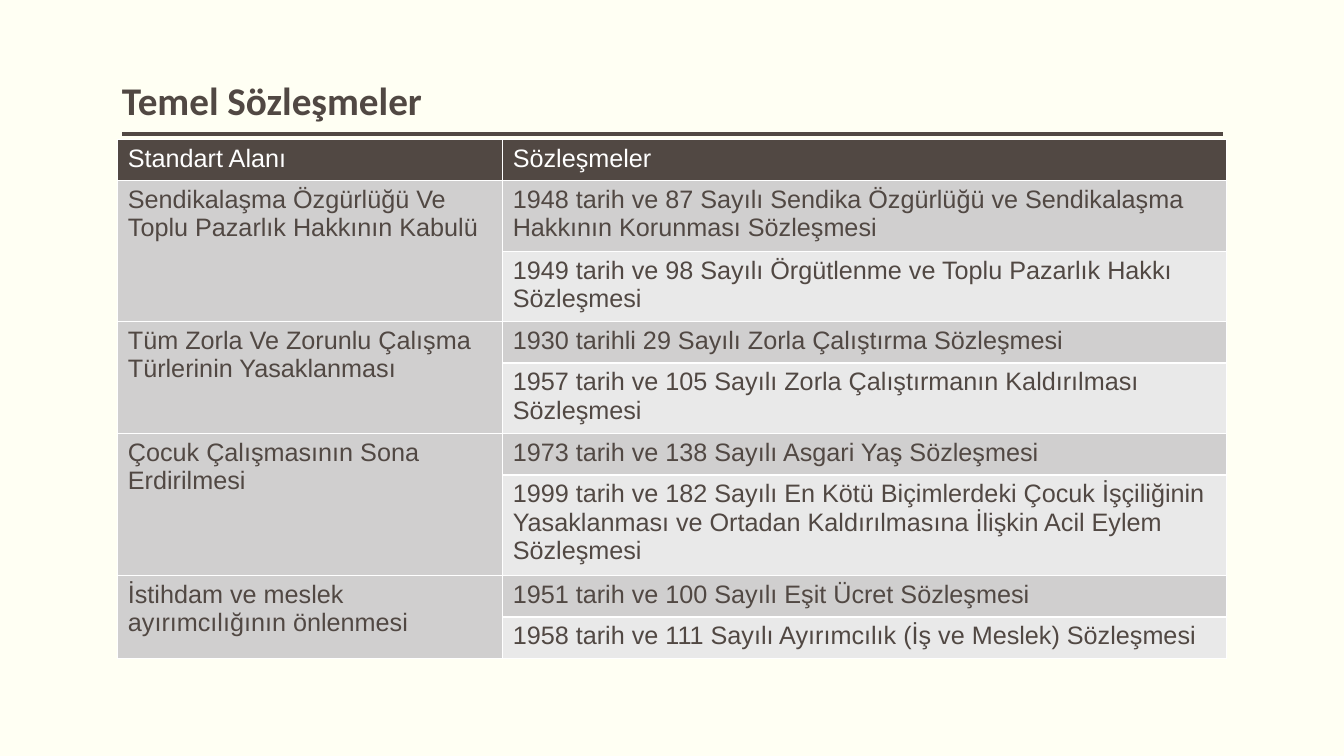
from lxml.etree import SubElement
from pptx import Presentation
from pptx.dml.color import RGBColor
from pptx.enum.text import MSO_ANCHOR
from pptx.oxml.ns import qn
from pptx.util import Cm, Pt

TITLE = "Temel Sözleşmeler"
HEADER = ("Standart Alanı", "Sözleşmeler")
AREAS = [
    ("Sendikalaşma Özgürlüğü Ve Toplu Pazarlık Hakkının Kabulü", (
        "1948 tarih ve 87 Sayılı Sendika Özgürlüğü ve Sendikalaşma Hakkının Korunması Sözleşmesi",
        "1949 tarih ve 98 Sayılı Örgütlenme ve Toplu Pazarlık Hakkı Sözleşmesi")),
    ("Tüm Zorla Ve Zorunlu Çalışma Türlerinin Yasaklanması", (
        "1930 tarihli 29 Sayılı Zorla Çalıştırma Sözleşmesi",
        "1957 tarih ve 105 Sayılı Zorla Çalıştırmanın Kaldırılması Sözleşmesi")),
    ("Çocuk Çalışmasının Sona Erdirilmesi", (
        "1973 tarih ve 138 Sayılı Asgari Yaş Sözleşmesi",
        "1999 tarih ve 182 Sayılı En Kötü Biçimlerdeki Çocuk İşçiliğinin Yasaklanması "
        "ve Ortadan Kaldırılmasına İlişkin Acil Eylem Sözleşmesi")),
    ("İstihdam ve meslek ayırımcılığının önlenmesi", (
        "1951 tarih ve 100 Sayılı Eşit Ücret Sözleşmesi",
        "1958 tarih ve 111 Sayılı Ayırımcılık (İş ve Meslek) Sözleşmesi")),
]
BROWN, WHITE, CREAM = "514843", "FFFFFF", "FFFFF3"
BANDS = ("D0CFCF", "E9E9E9")
COLUMNS = (9.7, 18.24)
ROW_HEIGHT = 1.04
LEFT, WIDTH, RULE_Y = 3.07, 27.74, 3.38


def paint(fill, color):
    fill.solid()
    fill.fore_color.rgb = RGBColor.from_string(color)


def style_text(p, font, size, color, bold=False):
    p.font.name, p.font.size, p.font.bold = font, Pt(size), bold
    paint(p.font.fill, color)


def style_cell(cell, fill, color):
    tcPr = cell._tc.get_or_add_tcPr()
    for side in ("lnL", "lnR", "lnT", "lnB"):
        ln = SubElement(tcPr, qn(f"a:{side}"), w=str(Pt(1)))
        SubElement(SubElement(ln, qn("a:solidFill")), qn("a:srgbClr"), val=WHITE)
    paint(cell.fill, fill)
    style_text(cell.text_frame.paragraphs[0], "Arial", 18, color)


def add_title(s):
    tf = s.shapes.add_textbox(Cm(LEFT), Cm(0.2), Cm(WIDTH), Cm(3.05)).text_frame
    tf.word_wrap = True
    tf.vertical_anchor = MSO_ANCHOR.BOTTOM
    tf.margin_left = tf.margin_right = 0
    p = tf.paragraphs[0]
    p.text = TITLE
    p.line_spacing = 0.9
    style_text(p, "Calibri", 28, BROWN, True)

    rule = s.shapes.add_connector(1, Cm(LEFT + WIDTH), Cm(RULE_Y), Cm(LEFT), Cm(RULE_Y))
    paint(rule.line.fill, BROWN)
    rule.line.width = Pt(3)
    SubElement(rule._element.spPr, qn("a:effectLst"))


def add_conventions(s):
    rows = [HEADER]
    for area, conventions in AREAS:
        rows += [(area if i == 0 else "", text) for i, text in enumerate(conventions)]
    table = s.shapes.add_table(len(rows), len(COLUMNS), Cm(2.97), Cm(3.51),
                               Cm(sum(COLUMNS)), Cm(ROW_HEIGHT * len(rows))).table
    for column, width in zip(table.columns, COLUMNS):
        column.width = Cm(width)
    for i, texts in enumerate(rows):
        table.rows[i].height = Cm(ROW_HEIGHT)
        for j, text in enumerate(texts):
            cell = table.cell(i, j)
            cell.text = text
            if i == 0:
                style_cell(cell, BROWN, WHITE)
            else:
                style_cell(cell, BANDS[(i - 1) % 2 if j else 0], BROWN)
    top = 1
    for area, conventions in AREAS:
        bottom = top + len(conventions) - 1
        table.cell(top, 0).merge(table.cell(bottom, 0))
        top = bottom + 1


def main():
    prs = Presentation()
    prs.slide_width, prs.slide_height = Cm(33.87), Cm(19.05)
    s = prs.slides.add_slide(prs.slide_layouts[6])
    paint(s.background.fill, CREAM)
    add_title(s)
    add_conventions(s)
    prs.save("out.pptx")


if __name__ == "__main__":
    main()
